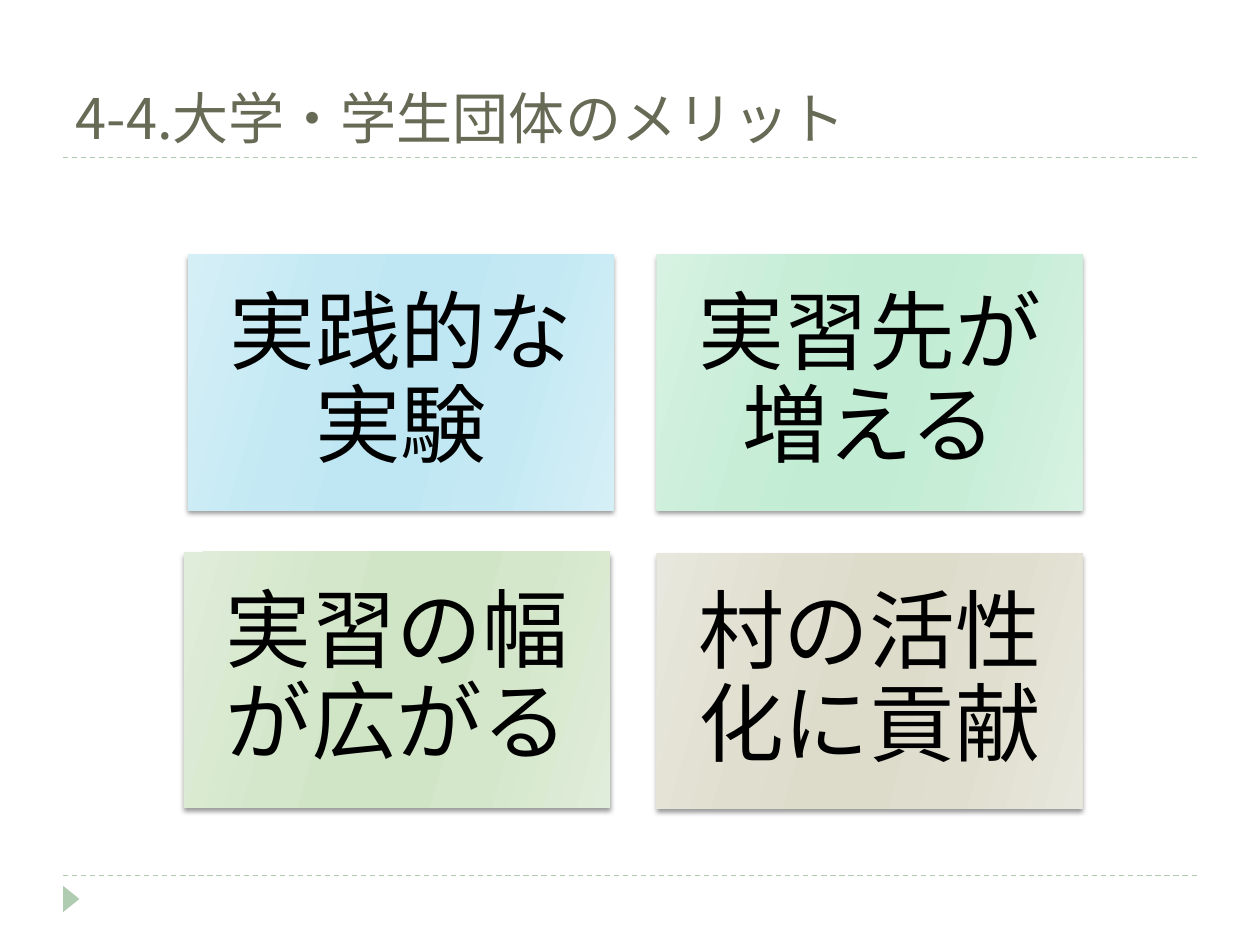
from lxml.etree import SubElement
from pptx import Presentation
from pptx.dml.color import RGBColor
from pptx.enum.dml import MSO_LINE
from pptx.enum.shapes import MSO_CONNECTOR, MSO_SHAPE
from pptx.enum.text import MSO_ANCHOR, PP_ALIGN
from pptx.oxml.ns import qn
from pptx.util import Inches, Pt

TITLE = "4-4.大学・学生団体のメリット"
# Text, gradient colours from edge to middle, shift from the grid (inches)
MERITS = [
    ("実践的な実験", ("D5EFF6", "C4E9F4", "BEE7F3"), (0, 0)),
    ("実習先が増える", ("D7F2E2", "C7EDD7", "C2ECD3"), (0, 0)),
    ("実習の幅が広がる", ("E0EDDA", "D4E7CB", "D0E5C6"), (-0.03, -0.01)),
    ("村の活性化に貢献", ("E8E7DD", "E0DECF", "DDDBCA"), (0, 0)),
]
COLORS = {"rule": "B0CCB0", "title": "676A55", "text": "000000"}
FONT = "Noto Sans CJK JP"
GRADIENT_STOPS = [(0, 0), (30, 1), (45, 2), (55, 2), (73, 1), (100, 0)]

SLIDE_W, SLIDE_H = 10, 7.5
MARGIN = 0.5
RULES_Y = (6.95, 1.25)
COLUMNS = 2
GRID_LEFT, GRID_TOP = 1.49, 2.02
CARD_W, CARD_H = 3.38, 2.03
GAP = 0.34


def set_text(frame, text, size, color, align, anchor):
    frame.text = text
    frame.word_wrap = True
    frame.vertical_anchor = anchor
    paragraph = frame.paragraphs[0]
    paragraph.alignment = align
    font = paragraph.font
    font.size = Pt(size)
    font.name = FONT
    font.color.rgb = RGBColor.from_string(COLORS[color])
    SubElement(font._element, qn("a:ea"), typeface=FONT)
    return paragraph


def set_gradient(fill, colors):
    fill.gradient()
    fill.gradient_angle = 360 - 16  # counter-clockwise
    stops = fill._fill._gradFill.find(qn("a:gsLst"))
    for stop in list(stops):
        stops.remove(stop)
    for position, index in GRADIENT_STOPS:
        stop = SubElement(stops, qn("a:gs"), pos=str(position * 1000))
        SubElement(stop, qn("a:srgbClr"), val=colors[index])


def add_drop_shadow(shape):
    shape.shadow.inherit = False
    effects = shape._element.spPr.find(qn("a:effectLst"))
    shadow = SubElement(effects, qn("a:outerShdw"), blurRad=str(Pt(3)),
                        dist=str(Pt(2)), dir="5400000", rotWithShape="0")
    color = SubElement(shadow, qn("a:srgbClr"), val="000000")
    SubElement(color, qn("a:alpha"), val="40000")


def add_rule(slide, y):
    rule = slide.shapes.add_connector(MSO_CONNECTOR.STRAIGHT, Inches(MARGIN), Inches(y),
                                      Inches(SLIDE_W - MARGIN), Inches(y))
    rule.line.color.rgb = RGBColor.from_string(COLORS["rule"])
    rule.line.width = Pt(0.75)
    rule.line.dash_style = MSO_LINE.DASH
    SubElement(rule._element.spPr, qn("a:effectLst"))


def add_marker(slide):
    marker = slide.shapes.add_shape(MSO_SHAPE.ISOSCELES_TRIANGLE, Inches(0.46),
                                    Inches(7.07), Inches(0.21), Inches(0.13))
    marker.rotation = 90
    marker.shadow.inherit = False
    marker.fill.solid()
    marker.fill.fore_color.rgb = RGBColor.from_string(COLORS["rule"])
    marker.line.fill.background()


def add_card(slide, index, text, colors, shift):
    row, column = divmod(index, COLUMNS)
    left = GRID_LEFT + column * (CARD_W + GAP) + shift[0]
    top = GRID_TOP + row * (CARD_H + GAP) * 1.0 + shift[1]
    card = slide.shapes.add_shape(MSO_SHAPE.RECTANGLE, Inches(left), Inches(top),
                                  Inches(CARD_W), Inches(CARD_H))
    set_gradient(card.fill, colors)
    card.line.fill.background()
    add_drop_shadow(card)
    frame = card.text_frame
    frame.margin_left = frame.margin_right = Inches(0.2)
    frame.margin_top = frame.margin_bottom = Inches(0.2)
    paragraph = set_text(frame, text, 49, "text", PP_ALIGN.CENTER, MSO_ANCHOR.MIDDLE)
    paragraph.line_spacing = 0.9


def main():
    deck = Presentation()
    deck.slide_width, deck.slide_height = Inches(SLIDE_W), Inches(SLIDE_H)
    slide = deck.slides.add_slide(deck.slide_layouts[5])

    for y in RULES_Y:
        add_rule(slide, y)
    add_marker(slide)

    title = slide.shapes.title
    title.left, title.top = Inches(MARGIN), Inches(0.17)
    title.width, title.height = Inches(SLIDE_W - 2 * MARGIN), Inches(1.08)
    set_text(title.text_frame, TITLE, 32, "title", PP_ALIGN.LEFT, MSO_ANCHOR.BOTTOM)

    for index, merit in enumerate(MERITS):
        add_card(slide, index, *merit)

    deck.save("out.pptx")


if __name__ == "__main__":
    main()
